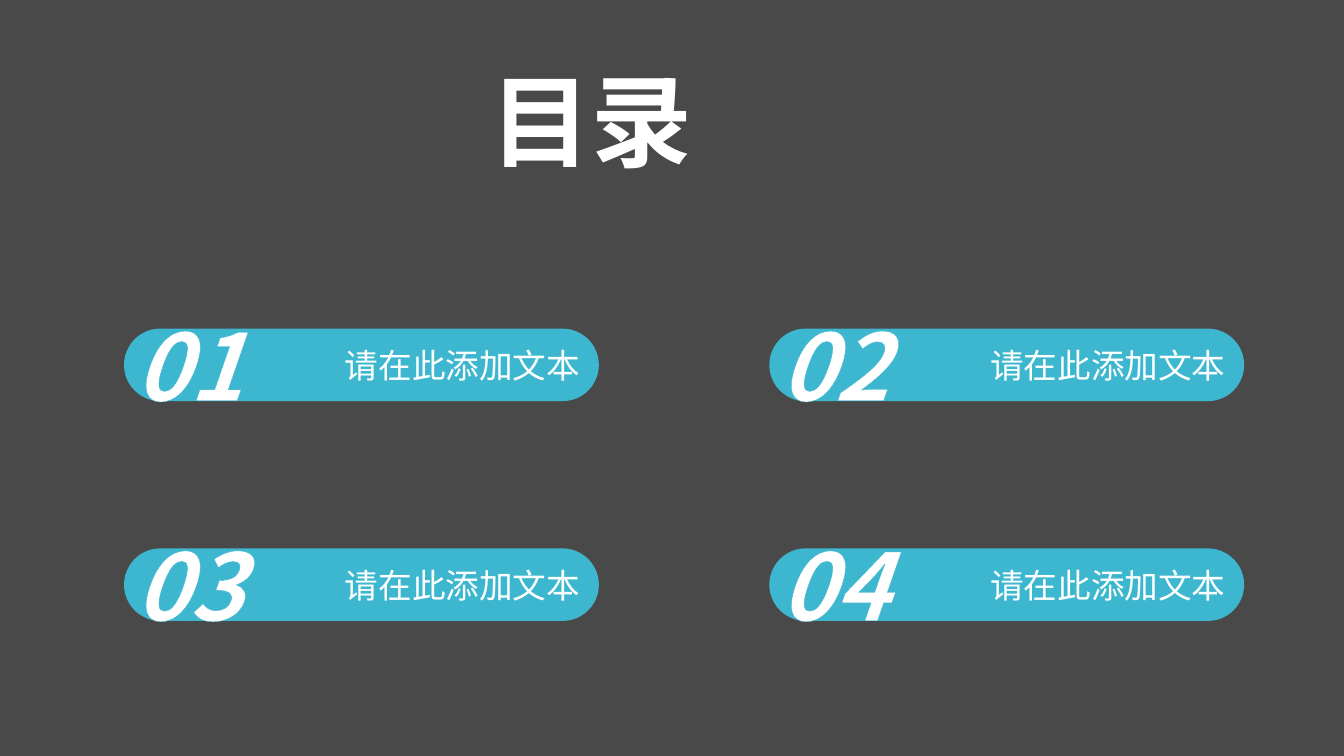
"""Build a contents slide with four numbered entries in a two by two grid."""
from lxml import etree
from pptx import Presentation
from pptx.dml.color import RGBColor
from pptx.enum.shapes import MSO_SHAPE
from pptx.enum.text import MSO_ANCHOR, MSO_AUTO_SIZE, PP_ALIGN
from pptx.oxml.ns import qn
from pptx.util import Inches, Pt

RECTANGLE, PILL = MSO_SHAPE.RECTANGLE, MSO_SHAPE.ROUNDED_RECTANGLE
JUSTIFY, CENTER, RIGHT = PP_ALIGN.JUSTIFY, PP_ALIGN.CENTER, PP_ALIGN.RIGHT
MIDDLE = MSO_ANCHOR.MIDDLE
GROW = MSO_AUTO_SIZE.SHAPE_TO_FIT_TEXT

TITLE = "目录"
ENTRIES = [
    ("01", "请在此添加文本"),
    ("02", "请在此添加文本"),
    ("03", "请在此添加文本"),
    ("04", "请在此添加文本"),
]

WIDTH, HEIGHT = 13.33, 7.5
COLUMNS = 2
PILL_LEFT, PILL_TOP, PILL_WIDTH, PILL_HEIGHT = 1.23, 3.26, 4.71, 0.72
NUMBER_LEFT, NUMBER_TOP, NUMBER_WIDTH, NUMBER_HEIGHT = 0.9, 3.01, 1.94, 1.21
COLUMN_STEP, ROW_STEP = 6.4, 2.18
PILL_INSET = 0.08

HEADING_FONT, BODY_FONT = "Noto Sans CJK SC", "Calibri"
BACKGROUND, OVERLAY, ACCENT = "4D4D4D", "3B3B39", "3DB7CF"
WHITE, LABEL_WHITE = "FFFFFF", "FEFFFF"


def set_color(fill, color):
    fill.solid()
    fill.fore_color.rgb = RGBColor.from_string(color)


def add_filled_shape(slide, kind, box, color):
    shape = slide.shapes.add_shape(kind, *map(Inches, box))
    shape.shadow.inherit = False
    set_color(shape.fill, color)
    shape.line.fill.background()
    return shape


def write(frame, text, size, font, color, align, bold=False, italic=False):
    paragraph = frame.paragraphs[0]
    paragraph.alignment = align
    run = paragraph.add_run()
    run.text = text
    run.font.size = Pt(size)
    run.font.name = font
    run.font.bold = bold
    run.font.italic = italic
    set_color(run.font.fill, color)
    properties = run.font._element
    east_asian = etree.SubElement(properties, qn("a:ea"))
    east_asian.set("typeface", HEADING_FONT)
    return run


def add_heading(slide, box, text, size, align, italic=False):
    frame = slide.shapes.add_textbox(*map(Inches, box)).text_frame
    frame.word_wrap = True
    frame.auto_size = GROW
    return write(frame, text, size, HEADING_FONT, WHITE, align, True, italic)


def add_outline(run, color, width):
    line = etree.Element(qn("a:ln"), w=str(Pt(width)))
    solid = etree.SubElement(line, qn("a:solidFill"))
    etree.SubElement(solid, qn("a:srgbClr"), val=color)
    run.font._element.insert(0, line)


def add_pill(slide, left, top, label):
    box = (left, top, PILL_WIDTH, PILL_HEIGHT)
    pill = add_filled_shape(slide, PILL, box, ACCENT)
    pill.adjustments[0] = 0.5
    frame = pill.text_frame
    frame.word_wrap = False
    frame.vertical_anchor = MIDDLE
    frame.margin_left = frame.margin_right = Inches(PILL_INSET)
    frame.margin_top = frame.margin_bottom = Inches(PILL_INSET)
    write(frame, label, 24, BODY_FONT, LABEL_WHITE, RIGHT)


def add_overlay(slide):
    overlay = add_filled_shape(slide, RECTANGLE, (0, 0, WIDTH, HEIGHT), OVERLAY)
    color = overlay._element.spPr.find(qn("a:solidFill")).find(qn("a:srgbClr"))
    etree.SubElement(color, qn("a:alpha"), val="20000")


def main():
    presentation = Presentation()
    presentation.slide_width = Inches(WIDTH)
    presentation.slide_height = Inches(HEIGHT)
    slide = presentation.slides.add_slide(presentation.slide_layouts[6])
    set_color(slide.background.fill, BACKGROUND)
    add_overlay(slide)
    add_heading(slide, (4.77, 0.53, 3.8, 1.31), TITLE, 72, JUSTIFY)
    for index, (number, label) in enumerate(ENTRIES):
        row, column = divmod(index, COLUMNS)
        across, down = column * COLUMN_STEP, row * ROW_STEP
        add_pill(slide, PILL_LEFT + across, PILL_TOP + down, label)
        box = (NUMBER_LEFT + across, NUMBER_TOP + down, NUMBER_WIDTH, NUMBER_HEIGHT)
        run = add_heading(slide, box, number, 66, CENTER, italic=True)
        add_outline(run, ACCENT, 0.75)
    presentation.save("out.pptx")


if __name__ == "__main__":
    main()
